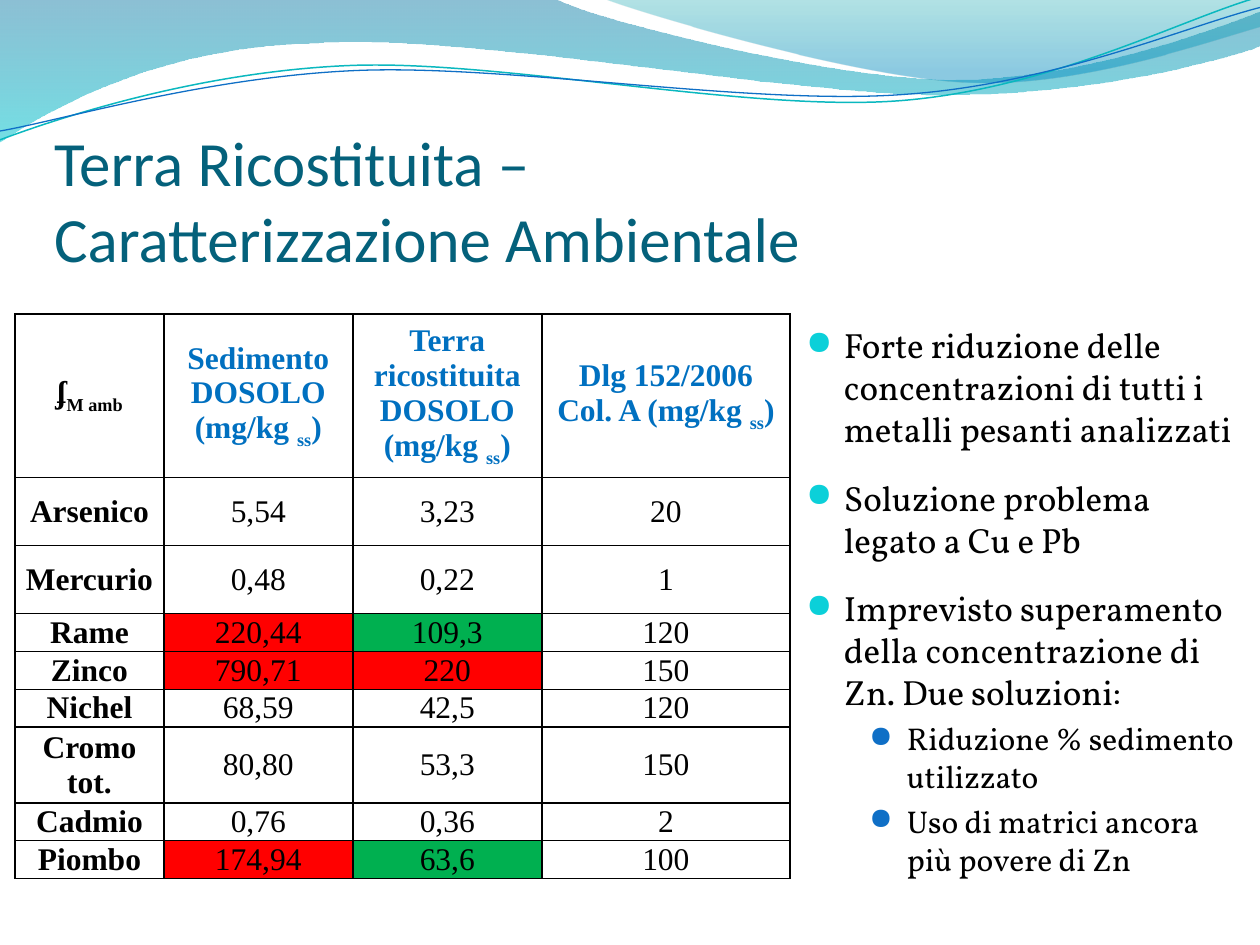
import math
import pptx
import pptx.util
import pptx.dml.color
import pptx.enum.text
import pptx.oxml
import pptx.oxml.ns
from dataclasses import dataclass

Inches, Pt = pptx.util.Inches, pptx.util.Pt
RGB = pptx.dml.color.RGBColor.from_string
ALIGN = pptx.enum.text.PP_ALIGN
ANCHOR = pptx.enum.text.MSO_ANCHOR
qn = pptx.oxml.ns.qn
NS = pptx.oxml.ns.nsdecls("a")


@dataclass(frozen=True)
class Theme:
    title_font: str = "Calibri"
    body_font: str = "Vollkorn"
    table_font: str = "Times New Roman"
    bullet_font: str = "OpenSymbol"
    title_size: int = 36
    body_size: int = 20
    small_size: int = 18
    title: str = "04617B"
    ink: str = "000000"
    heading: str = "0070C0"
    over: str = "FF0000"
    under: str = "00B050"
    paper: str = "FFFFFF"
    bullets: tuple = ("0BD0D9", "0F6FC6")
    band: tuple = (("0074A1", 0, 45), ("00C6CF", 1, 55))
    crest: tuple = (("00A1A9", 0, 30), ("008BBF", 0.8, 45))
    teal_line: str = "0AB8BF"
    blue_line: str = "0F6FC6"


def write(p, text, *, font, size, color, bold=False, subscript=False):
    r = p.add_run()
    r.text = text
    r.font.name, r.font.size, r.font.bold = font, Pt(size), bold
    r.font.color.rgb = RGB(color)
    if subscript:
        r._r.get_or_add_rPr().set("baseline", "-25000")


def turn(point, center, degrees):
    dx, dy = point[0] - center[0], point[1] - center[1]
    cos, sin = math.cos(math.radians(degrees)), math.sin(math.radians(degrees))
    return center[0] + dx * cos - dy * sin, center[1] + dx * sin + dy * cos


class Deck:
    def __init__(self, theme):
        self.theme = theme
        self.prs = pptx.Presentation()
        self.prs.slide_width, self.prs.slide_height = Inches(10), Inches(7.5)
        self.s = self.prs.slides.add_slide(self.prs.slide_layouts[6])

    def curve(self, start, segments, close, center=(0, 0), rotation=0):
        points = [start] + [pair for seg in segments for pair in zip(seg[::2], seg[1::2])]
        points = [tuple(map(Inches, turn(point, center, -rotation))) for point in points]
        builder = self.s.shapes.build_freeform(*points[0], scale=1.0)
        builder.add_line_segments(points[1:], close=close)
        sp = builder.convert_to_shape()
        sp.shadow.inherit = False
        sp.rotation = rotation
        lines = iter(list(sp._element.iter(qn("a:lnTo"))))
        for seg in segments:
            group = [next(lines) for _ in seg[::2]]
            if len(group) == 3:
                bezier = pptx.oxml.parse_xml(f"<a:cubicBezTo {NS}/>")
                group[0].addprevious(bezier)
                for line in group:
                    bezier.append(line[0])
                    line.getparent().remove(line)
        return sp

    def wave(self, start, segments, stops):
        sp = self.curve(start, segments, True)
        sp.line.fill.background()
        sp.fill.gradient()
        sp.fill.gradient_angle = 270
        for stop, (color, position, _) in zip(sp.fill.gradient_stops, stops):
            stop.color.rgb = RGB(color)
            stop.position = position
        for clr, (_, _, opacity) in zip(sp._element.spPr.iter(qn("a:srgbClr")), stops):
            clr.append(pptx.oxml.parse_xml(f'<a:alpha {NS} val="{opacity * 1000}"/>'))

    def ripple(self, start, segments, center, color, width):
        sp = self.curve(start, segments, False, center, -2.7)
        sp.fill.background()
        sp.line.color.rgb = RGB(color)
        sp.line.width = Pt(width)

    def box(self, x, y, w, h, margins, anchor):
        tf = self.s.shapes.add_textbox(Inches(x), Inches(y), Inches(w), Inches(h)).text_frame
        tf.word_wrap = True
        tf.vertical_anchor = anchor
        tf.margin_left, tf.margin_top, tf.margin_right, tf.margin_bottom = map(Inches, margins)
        return tf

    def title(self, lines):
        t = self.theme
        p = self.box(0.43, 0.76, 8.66, 1.42, (0, 0.05, 0, 0), ANCHOR.BOTTOM).paragraphs[0]
        for i, line in enumerate(lines):
            if i:
                p.add_line_break()
            write(p, line, font=t.title_font, size=t.title_size, color=t.title)

    def bullets(self, items):
        t = self.theme
        tf = self.box(6.3, 2.57, 3.7, 4.93, (0.1, 0, 0.1, 0.05), ANCHOR.TOP)
        for i, (level, text) in enumerate(items):
            p = tf.add_paragraph() if i else tf.paragraphs[0]
            p.level = level
            p.space_before = Pt(15 if i and level == 0 else 4)
            pPr = p._p.get_or_add_pPr()
            pPr.set("marL", str(Inches(0.3 + 0.5 * level)))
            pPr.set("indent", str(Inches(-0.3)))
            for xml in (f'<a:buClr {NS}><a:srgbClr val="{t.bullets[level]}"/></a:buClr>',
                        f'<a:buSzPct {NS} val="95000"/>',
                        f'<a:buFont {NS} typeface="{t.bullet_font}"/>',
                        f'<a:buChar {NS} char="●"/>'):
                pPr.append(pptx.oxml.parse_xml(xml))
            write(p, text, font=t.body_font, color=t.ink,
                  size=t.small_size if level else t.body_size)

    def cell(self, cell, parts, color, bold, fill):
        t = self.theme
        cell.vertical_anchor = ANCHOR.MIDDLE
        cell.margin_left = cell.margin_right = Inches(0.07)
        cell.margin_top = cell.margin_bottom = 0
        tcPr = cell._tc.get_or_add_tcPr()
        for side in ("lnL", "lnR", "lnT", "lnB"):
            tcPr.append(pptx.oxml.parse_xml(
                f'<a:{side} {NS} w="{Pt(1)}"><a:solidFill><a:srgbClr val="{t.ink}"/>'
                f'</a:solidFill></a:{side}>'))
        if fill:
            cell.fill.solid()
            cell.fill.fore_color.rgb = RGB(fill)
        else:
            cell.fill.background()
        p = cell.text_frame.paragraphs[0]
        p.alignment = ALIGN.CENTER
        for i, part in enumerate(parts):
            write(p, part, font=t.table_font, size=t.small_size, color=color,
                  bold=bold, subscript=i == 1)

    def table(self, x, y, widths, heights, rows, fills):
        t = self.theme
        table = self.s.shapes.add_table(len(rows), len(widths), Inches(x), Inches(y),
                                        Inches(sum(widths)), Inches(sum(heights))).table
        for column, width in zip(table.columns, widths):
            column.width = Inches(width)
        for row, height in zip(table.rows, heights):
            row.height = Inches(height)
        for i, row in enumerate(rows):
            for j, parts in enumerate(row):
                self.cell(table.cell(i, j), (parts,) if isinstance(parts, str) else parts,
                          color=t.heading if i == 0 and j else t.ink,
                          bold=i == 0 or j == 0, fill=fills.get((i, j)))


def main():
    theme = Theme()
    deck = Deck(theme)
    deck.wave((0, 0), [(4.4, -0.01), (4.76, 0.17, 6.64, 0.63, 7.58, 0.63),
                       (8.53, 0.63, 9.58, 0.26, 10, 0.09), (10.01, 0.36),
                       (9.83, 0.44, 8.7, 0.76, 7.46, 0.75),
                       (6.22, 0.75, 3.82, 0.28, 2.57, 0.34),
                       (1.29, 0.36, 0.46, 0.83, -0.01, 1.13)], theme.band)
    deck.wave((4.79, -0.01), [(5.09, 0.11, 6.82, 0.62, 7.69, 0.65),
                              (8.56, 0.69, 9.61, 0.32, 10, 0.21), (10, 0)], theme.crest)
    deck.ripple((0, 1.11), [(0.48, 0.93, 1.58, 0.57, 2.77, 0.52),
                            (3.95, 0.47, 5.93, 0.89, 7.13, 0.8),
                            (8.33, 0.71, 9.38, 0.15, 9.98, -0.02)],
                (4.99, 0.57), theme.teal_line, 0.85)
    deck.ripple((0, 1.04), [(0.47, 0.96, 1.64, 0.61, 2.83, 0.56),
                            (4.03, 0.51, 5.97, 0.84, 7.17, 0.75),
                            (8.36, 0.67, 9.41, 0.21, 10, 0.06)],
                (5, 0.59), theme.blue_line, 0.75)
    deck.title(["Terra Ricostituita –", "Caratterizzazione Ambientale"])
    deck.bullets([
        (0, "Forte riduzione delle concentrazioni di tutti i metalli pesanti analizzati"),
        (0, "Soluzione problema legato a Cu e Pb"),
        (0, "Imprevisto superamento della concentrazione di Zn. Due soluzioni:"),
        (1, "Riduzione % sedimento utilizzato"),
        (1, "Uso di matrici ancora più povere di Zn"),
    ])
    rows = [
        [("ʄ", "M amb"), ("Sedimento DOSOLO (mg/kg ", "ss", ")"),
         ("Terra ricostituita DOSOLO (mg/kg ", "ss", ")"),
         ("Dlg 152/2006 Col. A (mg/kg ", "ss", ")")],
        ["Arsenico", "5,54", "3,23", "20"],
        ["Mercurio", "0,48", "0,22", "1"],
        ["Rame", "220,44", "109,3", "120"],
        ["Zinco", "790,71", "220", "150"],
        ["Nichel", "68,59", "42,5", "120"],
        ["Cromo tot.", "80,80", "53,3", "150"],
        ["Cadmio", "0,76", "0,36", "2"],
        ["Piombo", "174,94", "63,6", "100"],
    ]
    fills = {(3, 1): theme.over, (4, 1): theme.over, (4, 2): theme.over,
             (8, 1): theme.over, (3, 2): theme.under, (8, 2): theme.under}
    heights = [1.3] + [0.54] * 2 + [0.28] * 3 + [0.56] + [0.28] * 2
    deck.table(0.12, 2.49, [1.18, 1.5, 1.5, 1.97], heights, rows, fills)
    deck.prs.save("out.pptx")


if __name__ == "__main__":
    main()
